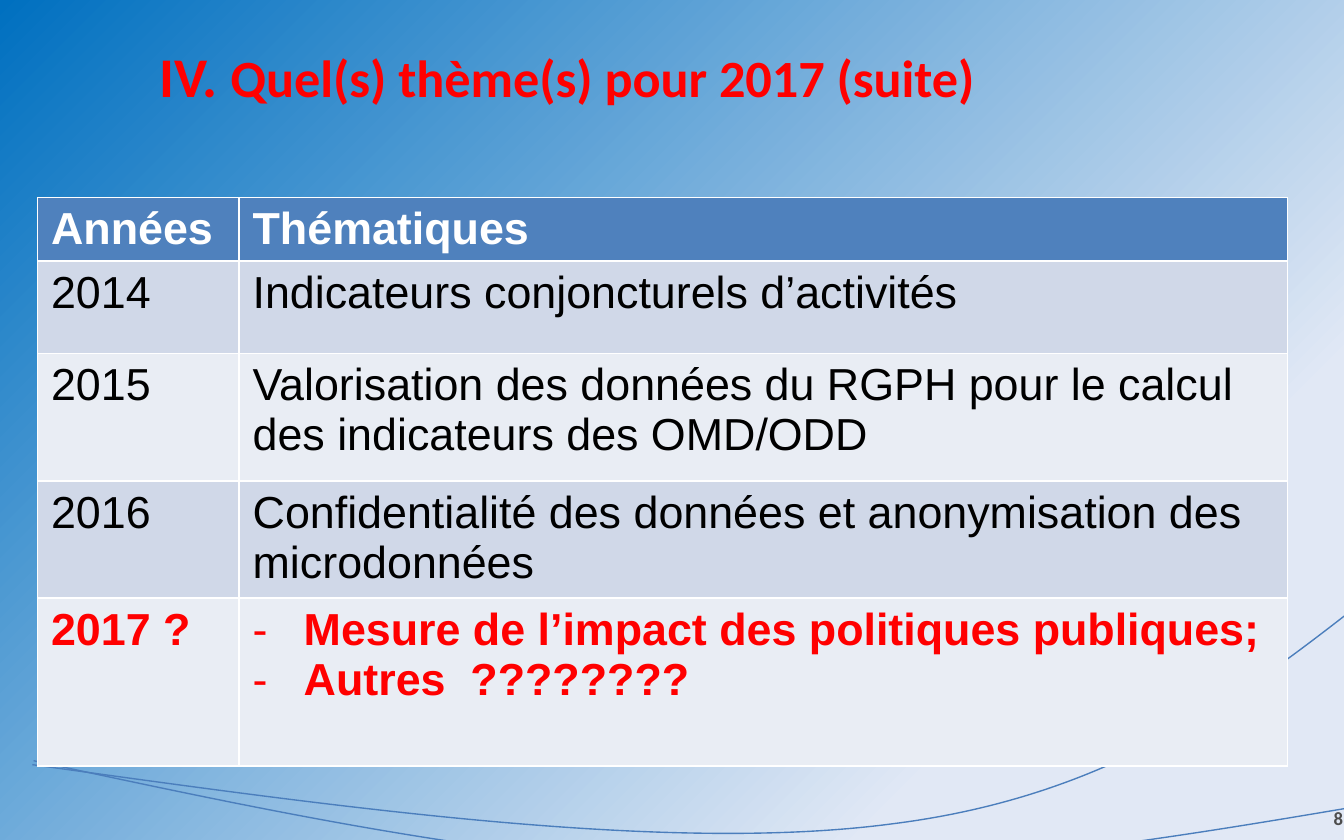
from lxml.etree import SubElement
from pptx import Presentation
from pptx.dml.color import RGBColor
from pptx.enum.text import MSO_ANCHOR as Anchor, PP_ALIGN as Align
from pptx.oxml.ns import qn
from pptx.util import Inches, Pt

WIDTH, HEIGHT = 10, 6.25
RED, WHITE, BLACK = "FF0000", "FFFFFF", "000000"
BANDS = ["D0D8E8", "E9EDF4"]
HEADER_FILL = "4F81BD"
GRADIENT = [("E1E8F5", 0.22), ("0070C0", 1)]

# Each curve: a start point, then two controls and an end per Bézier segment
CURVES = [
    [(0.24, 5.69), (2.61, 6.02), (4.98, 6.35), (6.64, 6.13),
     (8.31, 5.92), (9.28, 5.15), (10.25, 4.39)],
    [(0.25, 5.66), (2.01, 6.04), (3.76, 6.41), (5.43, 6.46),
     (7.1, 6.51), (8.69, 6.24), (10.28, 5.97)],
]
TITLE = [("IV. ", 30), ("Quel(s) thème(s) pour 2017 (suite)", 28)]
PAGE_NUMBER = "8"
THEMES = [
    ("Années", ["Thématiques"]),
    ("2014", ["Indicateurs conjoncturels d’activités"]),
    ("2015", ["Valorisation des données du RGPH pour le calcul "
              "des indicateurs des OMD/ODD"]),
    ("2016", ["Confidentialité des données et anonymisation des microdonnées"]),
    ("2017 ?", ["Mesure de l’impact des politiques publiques;",
                "Autres  ????????"]),
]
COLUMN_WIDTHS = [1.5, 7.8]
ROW_HEIGHTS = [0.47, 0.69, 0.95, 0.85, 1.25]


def color(value):
    return RGBColor.from_string(value)


def add_run(paragraph, text, size, hue, bold=True, face="Calibri"):
    run = paragraph.add_run()
    run.text = text
    formats = {"size": Pt(size), "bold": bold, "name": face}
    for key, value in formats.items():
        setattr(run.font, key, value)
    run.font.color.rgb = color(hue)


def add_text_frame(slide, left, top, width, height):
    frame = slide.shapes.add_textbox(
        *map(Inches, (left, top, width, height))).text_frame
    frame.word_wrap = True
    frame.vertical_anchor = Anchor.MIDDLE
    return frame


def paint_background(slide):
    """Radial gradient centred on the bottom right corner."""
    fill = slide.background.fill
    fill.gradient()
    for stop, (hue, position) in zip(fill.gradient_stops, GRADIENT):
        stop.color.rgb = color(hue)
        stop.position = position
    linear = next(slide.element.iter(qn("a:lin")))
    gradient = linear.getparent()
    gradient.remove(linear)
    radial = SubElement(gradient, qn("a:path"), path="circle")
    SubElement(radial, qn("a:fillToRect"), l="100000", t="100000")


def draw_curve(slide, points):
    """Outline through all points, each three then joined into one Bézier."""
    start, *others = [tuple(map(Inches, point)) for point in points]
    builder = slide.shapes.build_freeform(*start)
    builder.add_line_segments(others, close=False)
    curve = builder.convert_to_shape()
    lines = list(curve._element.iter(qn("a:lnTo")))
    outline = lines[0].getparent()
    for first in range(0, len(lines), 3):
        segment = SubElement(outline, qn("a:cubicBezTo"))
        for line in lines[first:first + 3]:
            segment.append(line[0])
            outline.remove(line)
    curve.shadow.inherit = False
    curve.fill.background()
    curve.line.color.rgb = color("4B7EBC")
    curve.line.width = Pt(0.75)


def add_dash(paragraph):
    properties = paragraph._p.get_or_add_pPr()
    properties.set("marL", str(Inches(0.38)))
    properties.set("indent", str(Inches(-0.38)))
    SubElement(properties, qn("a:buFont"), typeface="Arial")
    SubElement(properties, qn("a:buChar"), char="-")


def fill_cell(cell, lines, row):
    header, proposal = row == 0, row == len(THEMES) - 1
    hue = WHITE if header else RED if proposal else BLACK
    cell.fill.solid()
    cell.fill.fore_color.rgb = color(
        HEADER_FILL if header else BANDS[(row - 1) % 2])
    cell.margin_bottom = Inches(0.02)
    for index, line in enumerate(lines):
        frame = cell.text_frame
        paragraph = frame.add_paragraph() if index else frame.paragraphs[0]
        if len(lines) > 1:
            add_dash(paragraph)
        add_run(paragraph, line, 24, hue, header or proposal, "Arial")


def add_themes(slide):
    """Table whose default style supplies the white rules."""
    table = slide.shapes.add_table(
        len(THEMES), len(COLUMN_WIDTHS), Inches(0.28), Inches(1.47),
        Inches(sum(COLUMN_WIDTHS)), Inches(sum(ROW_HEIGHTS))).table
    for column, width in zip(table.columns, COLUMN_WIDTHS):
        column.width = Inches(width)
    for row, (year, themes) in enumerate(THEMES):
        table.rows[row].height = Inches(ROW_HEIGHTS[row])
        fill_cell(table.cell(row, 0), [year], row)
        fill_cell(table.cell(row, 1), themes, row)


def main():
    deck = Presentation()
    deck.slide_width, deck.slide_height = Inches(WIDTH), Inches(HEIGHT)
    slide = deck.slides.add_slide(deck.slide_layouts[6])
    paint_background(slide)
    for points in CURVES:
        draw_curve(slide, points)

    title = add_text_frame(slide, 0.59, 0.29, 9.69, 1.04)
    title.margin_left, title.margin_bottom = Inches(0.6), Inches(0.55)
    for text, size in TITLE:
        add_run(title.paragraphs[0], text, size, RED)

    number = add_text_frame(slide, 9.1, 5.92, 0.99, 0.33).paragraphs[0]
    number.alignment = Align.RIGHT
    add_run(number, PAGE_NUMBER, 10, "4D4D4D")

    add_themes(slide)
    deck.save("out.pptx")


if __name__ == "__main__":
    main()
